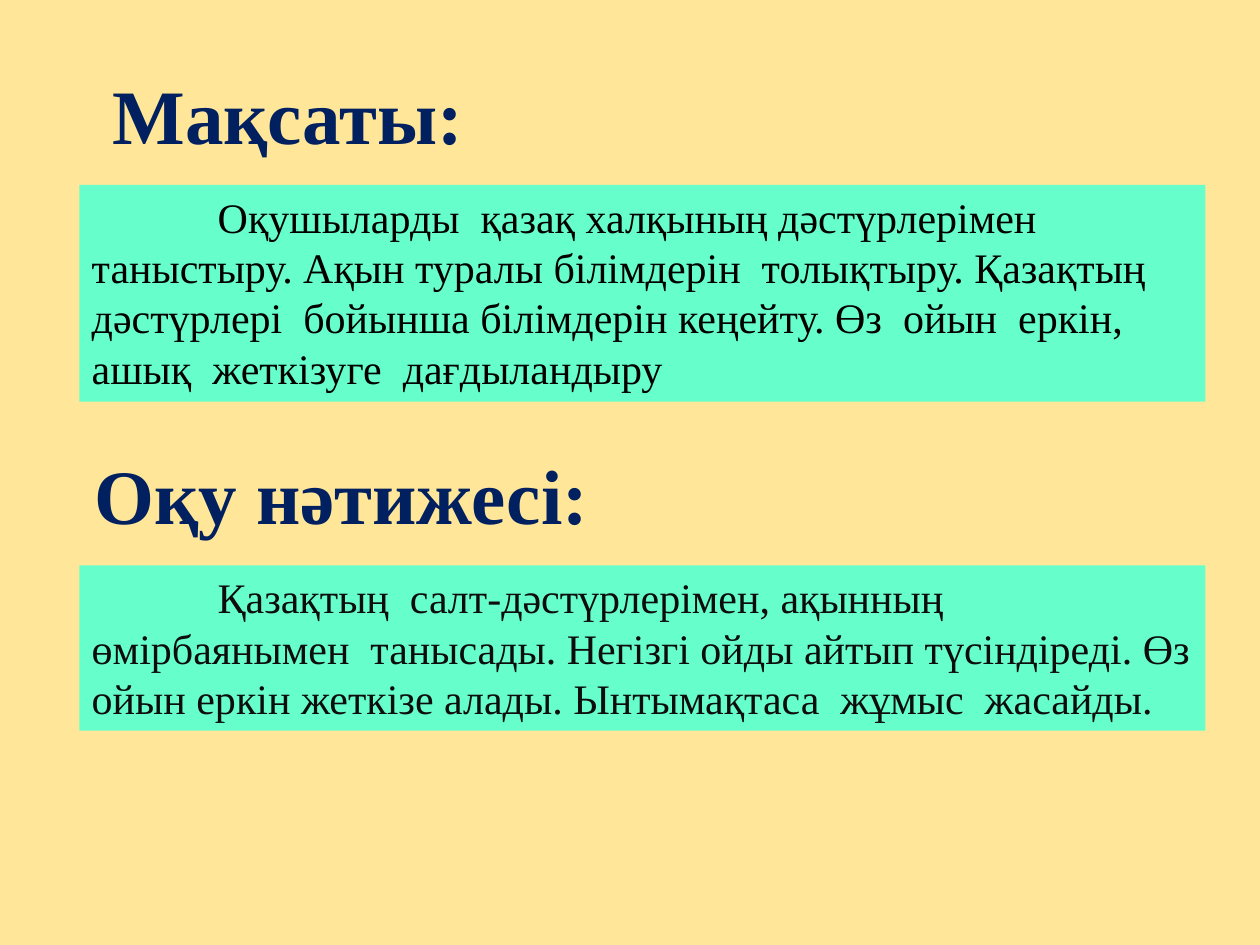
"""Build a slide with a lesson's goal and its learning outcome."""
from dataclasses import dataclass

from lxml import etree
from pptx import Presentation
from pptx.dml.color import RGBColor
from pptx.enum import shapes, text
from pptx.oxml import ns
from pptx.util import Cm, Pt


@dataclass(frozen=True)
class Theme:
    font: str = "Times New Roman"
    background: str = "FFE699"
    panel: str = "66FFCC"
    heading: str = "002060"
    outline: str = "ED7D31"
    outline_width: Pt = Pt(1.75)
    heading_size: Pt = Pt(44)
    body_size: Pt = Pt(24)


@dataclass(frozen=True)
class Box:
    left: float
    top: float
    width: float
    height: float


@dataclass(frozen=True)
class Section:
    heading: str
    heading_box: Box
    body: str
    body_box: Box
    body_color: str


THEME = Theme()
PANEL_LEFT, PANEL_WIDTH = 1.6, 22.7
SECTIONS = [
    Section(
        "Мақсаты:", Box(1.98, 1.24, 7.65, 2.13),
        "Оқушыларды  қазақ халқының дәстүрлерімен таныстыру. "
        "Ақын туралы білімдерін  толықтыру. Қазақтың  дәстүрлері  бойынша "
        "білімдерін кеңейту. Өз  ойын  еркін, ашық  жеткізуге  дағдыландыру",
        Box(PANEL_LEFT, 3.73, PANEL_WIDTH, 4.37), "000000"),
    Section(
        "Оқу нәтижесі:", Box(PANEL_LEFT, 8.89, 10.57, 2.13),
        "Қазақтың  салт-дәстүрлерімен, ақынның өмірбаянымен  танысады. "
        "Негізгі ойды айтып түсіндіреді. Өз ойын еркін жеткізе алады. "
        "Ынтымақтаса  жұмыс  жасайды.",
        Box(PANEL_LEFT, 11.4, PANEL_WIDTH, 3.33), "0D0D0D"),
]


def place(sp, box: Box) -> None:
    """Move and size a shape."""
    sp.left, sp.top = Cm(box.left), Cm(box.top)
    sp.width, sp.height = Cm(box.width), Cm(box.height)


def write(sp, words: str, size: Pt, color: str, align, bold: bool = False):
    """Set and format a shape's only paragraph, and return it."""
    tf = sp.text_frame
    tf.text = words
    tf.auto_size = text.MSO_AUTO_SIZE.SHAPE_TO_FIT_TEXT
    tf.vertical_anchor = text.MSO_ANCHOR.TOP
    p = tf.paragraphs[0]
    p.alignment = align
    font = p.runs[0].font
    font.name, font.size, font.bold = THEME.font, size, bold
    font.color.rgb = RGBColor.from_string(color)
    return p


def draw_heading(sp, words: str, box: Box) -> None:
    """Fill a heading with bold, outlined words."""
    place(sp, box)
    p = write(sp, words, THEME.heading_size, THEME.heading,
              text.PP_ALIGN.CENTER, bold=True)
    sp.text_frame.word_wrap = False
    ln = etree.Element(ns.qn("a:ln"), w=str(int(THEME.outline_width)))
    fill = etree.SubElement(ln, ns.qn("a:solidFill"))
    etree.SubElement(fill, ns.qn("a:srgbClr"), val=THEME.outline)
    p.runs[0].font._element.insert(0, ln)


def draw_panel(slide, words: str, box: Box, color: str) -> None:
    """Add a filled panel whose first line is indented."""
    sp = slide.shapes.add_shape(shapes.MSO_SHAPE.RECTANGLE, 0, 0, 0, 0)
    place(sp, box)
    sp.shadow.inherit = False
    sp.fill.solid()
    sp.fill.fore_color.rgb = RGBColor.from_string(THEME.panel)
    sp.line.fill.background()
    p = write(sp, words, THEME.body_size, color, text.PP_ALIGN.LEFT)
    sp.text_frame.word_wrap = True
    p._p.get_or_add_pPr().set("indent", str(int(Cm(2.54))))


def main() -> None:
    """Build and save the slide."""
    prs = Presentation()
    prs.slide_width, prs.slide_height = Cm(25.4), Cm(19.05)
    slide = prs.slides.add_slide(prs.slide_layouts[5])
    background = slide.background.fill
    background.solid()
    background.fore_color.rgb = RGBColor.from_string(THEME.background)
    headings = [slide.shapes.title, slide.shapes.add_textbox(0, 0, 0, 0)]
    for sp, section in zip(headings, SECTIONS):
        draw_heading(sp, section.heading, section.heading_box)
        draw_panel(slide, section.body, section.body_box, section.body_color)
    prs.save("out.pptx")


if __name__ == "__main__":
    main()
